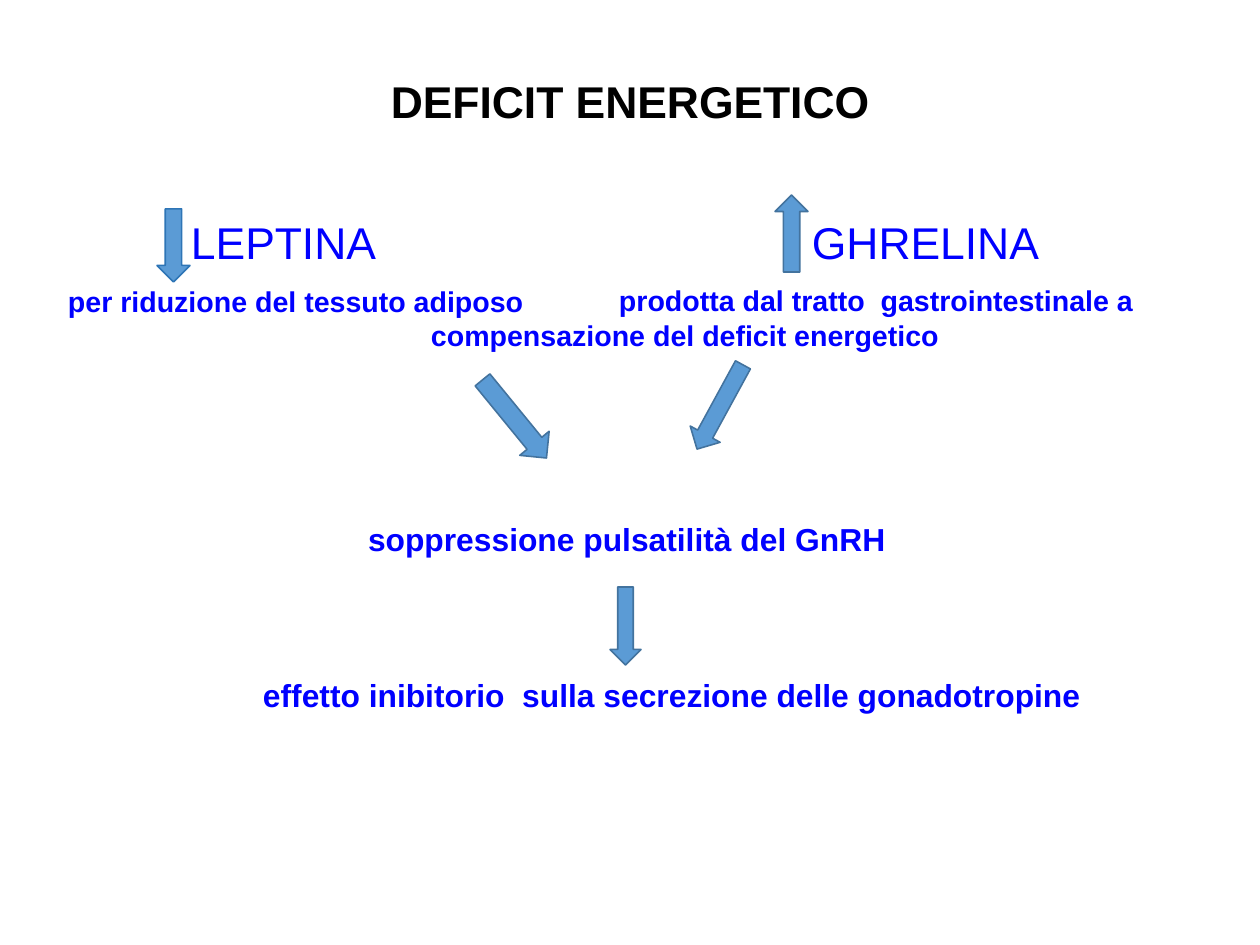
from dataclasses import dataclass

from pptx import Presentation
from pptx.dml.color import RGBColor
from pptx.enum.shapes import MSO_SHAPE
from pptx.enum.text import MSO_ANCHOR, PP_ALIGN
from pptx.slide import Slide
from pptx.util import Emu, Pt

DOWN_ARROW = MSO_SHAPE.DOWN_ARROW
RIGHT_ARROW = MSO_SHAPE.RIGHT_ARROW
MIDDLE = MSO_ANCHOR.MIDDLE
LEFT = PP_ALIGN.LEFT
CENTER = PP_ALIGN.CENTER

BLACK = RGBColor(0x00, 0x00, 0x00)
BLUE = RGBColor(0x00, 0x00, 0xFF)
ARROW_FILL = RGBColor(0x5B, 0x9B, 0xD5)
ARROW_LINE = RGBColor(0x43, 0x73, 0x9E)
BRIGHT_LINE = RGBColor(0x2E, 0x75, 0xB6)

FONT = "Arial"
EMU_PER_PX = 8000
SLIDE_WIDTH, SLIDE_HEIGHT = 1260, 945


@dataclass(frozen=True)
class Box:
    left: int
    top: int
    width: int
    height: int


@dataclass(frozen=True)
class Arrow:
    box: Box
    preset: MSO_SHAPE = DOWN_ARROW
    rotation: float = 0
    line: RGBColor = ARROW_LINE


@dataclass(frozen=True)
class Label:
    text: str
    box: Box
    size: int
    bold: bool = True


LABELS = [
    Label("LEPTINA", Box(191, 216, 300, 52), 28, bold=False),
    Label("GHRELINA", Box(812, 216, 300, 52), 28, bold=False),
    Label("per riduzione del tessuto adiposo", Box(68, 284, 500, 34), 18),
    Label("soppressione pulsatilità del GnRH", Box(368, 520, 600, 38), 20),
    Label("effetto inibitorio  sulla secrezione delle gonadotropine",
          Box(263, 676, 900, 38), 20),
]

ARROWS = [
    Arrow(Box(157, 209, 33, 73), line=BRIGHT_LINE),
    Arrow(Box(775, 195, 33, 77), rotation=180),
    Arrow(Box(464, 400, 101, 38), preset=RIGHT_ARROW, rotation=50.7),
    Arrow(Box(703, 359, 34, 96), rotation=28.6),
    Arrow(Box(610, 587, 31, 78)),
]


def px(length: int) -> Emu:
    return Emu(length * EMU_PER_PX)


def place(box: Box) -> tuple[Emu, Emu, Emu, Emu]:
    return px(box.left), px(box.top), px(box.width), px(box.height)


def add_text(slide: Slide, text: str, box: Box, *, size: int, bold: bool = True,
             color: RGBColor = BLUE, align: PP_ALIGN = LEFT,
             first_indent: int = 0, line_points: int | None = None) -> None:
    """Add a text box without insets; first_indent shifts its first line only."""
    frame = slide.shapes.add_textbox(*place(box)).text_frame
    frame.word_wrap = True
    frame.vertical_anchor = MIDDLE
    frame.margin_left = frame.margin_right = 0
    frame.margin_top = frame.margin_bottom = 0
    paragraph = frame.paragraphs[0]
    paragraph.alignment = align
    if line_points:
        paragraph.line_spacing = Pt(line_points)
    if first_indent:
        properties = paragraph._p.get_or_add_pPr()
        properties.set("marL", "0")
        properties.set("indent", str(px(first_indent)))
    run = paragraph.add_run()
    run.text = text
    run.font.name = FONT
    run.font.size = Pt(size)
    run.font.bold = bold
    run.font.color.rgb = color


def add_arrow(slide: Slide, arrow: Arrow) -> None:
    shape = slide.shapes.add_shape(arrow.preset, *place(arrow.box))
    shape.shadow.inherit = False
    shape.rotation = arrow.rotation
    shape.fill.solid()
    shape.fill.fore_color.rgb = ARROW_FILL
    shape.line.color.rgb = arrow.line
    shape.line.width = Pt(1)


def main() -> None:
    presentation = Presentation()
    presentation.slide_width = px(SLIDE_WIDTH)
    presentation.slide_height = px(SLIDE_HEIGHT)
    slide = presentation.slides.add_slide(presentation.slide_layouts[6])

    add_text(slide, "DEFICIT ENERGETICO", Box(63, 40, 1134, 122),
             size=28, color=BLACK, align=CENTER)
    for label in LABELS:
        add_text(slide, label.text, label.box, size=label.size, bold=label.bold)
    add_text(slide, "prodotta dal tratto  gastrointestinale a "
             "compensazione del deficit energetico",
             Box(431, 282, 720, 70), size=18, first_indent=188, line_points=22)
    for arrow in ARROWS:
        add_arrow(slide, arrow)

    presentation.save("out.pptx")


if __name__ == "__main__":
    main()
